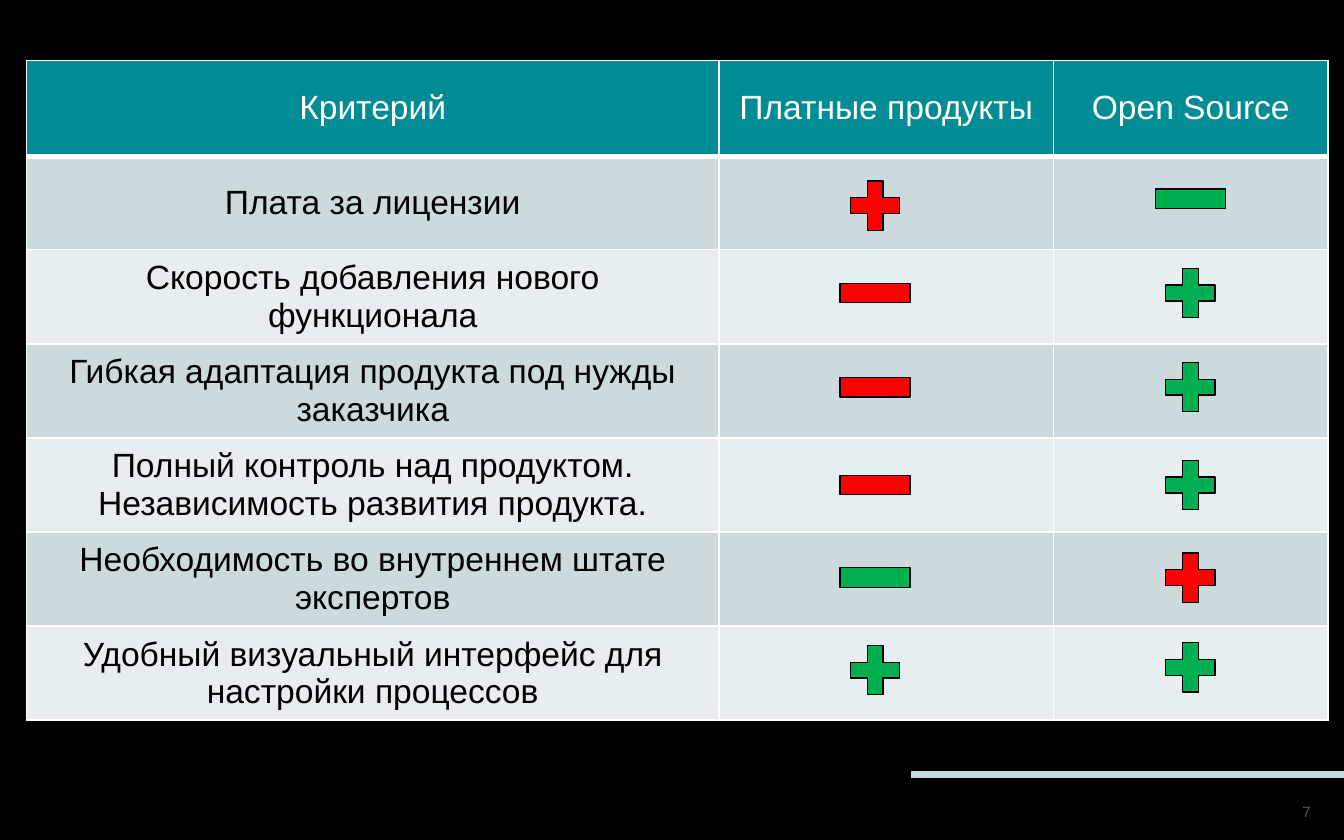
from lxml import etree
from pptx import Presentation
from pptx.dml.color import RGBColor
from pptx.enum.shapes import MSO_CONNECTOR, MSO_SHAPE
from pptx.enum.text import MSO_ANCHOR, PP_ALIGN
from pptx.oxml.ns import qn
from pptx.util import Cm, Pt

PLUS, MINUS = MSO_SHAPE.MATH_PLUS, MSO_SHAPE.MATH_MINUS
STRAIGHT = MSO_CONNECTOR.STRAIGHT
MIDDLE, BOTTOM = MSO_ANCHOR.MIDDLE, MSO_ANCHOR.BOTTOM
CENTER, RIGHT = PP_ALIGN.CENTER, PP_ALIGN.RIGHT

THEME = {
    "font": "Arial", "table_size": 18, "number_size": 8,
    "background": "000000", "header": "008C95", "bands": ("CCDADD", "E7EEEF"),
    "header_text": "FFFFFF", "text": "000000", "border": "FFFFFF",
    "good": "00B050", "bad": "FF0000", "outline": "000000",
    "rule": "C0DADE", "number": "595959",
}

HEADERS = ("Критерий", "Платные продукты", "Open Source")
# criterion, then (shape, verdict, centre height in cm) for each product type
CRITERIA = [
    ("Плата за лицензии", (PLUS, "bad", 3.89), (MINUS, "good", 3.76)),
    ("Скорость добавления нового функционала",
     (MINUS, "bad", 5.54), (PLUS, "good", 5.54)),
    ("Гибкая адаптация продукта под нужды заказчика",
     (MINUS, "bad", 7.32), (PLUS, "good", 7.32)),
    ("Полный контроль над продуктом. Независимость развития продукта.",
     (MINUS, "bad", 9.17), (PLUS, "good", 9.17)),
    ("Необходимость во внутреннем штате экспертов",
     (MINUS, "good", 10.92), (PLUS, "bad", 10.92)),
    ("Удобный визуальный интерфейс для настройки процессов",
     (PLUS, "good", 12.67), (PLUS, "good", 12.62)),
]
PAGE_NUMBER = "7"

SLIDE_SIZE = (25.4, 15.88)
TABLE_LEFT, TABLE_TOP = 0.5, 1.14
COL_WIDTHS = (13.09, 6.32, 5.19)
HEADER_HEIGHT, ROW_HEIGHT = 1.81, 1.77
MARK_CENTERS = (16.54, 22.5)
MARK_SIZES = {PLUS: (1.27, 1.27), MINUS: (1.8, 1.57)}


def color(name):
    return RGBColor.from_string(THEME[name])


def write(tf, text, size, color_name, align):
    tf.text = text
    p = tf.paragraphs[0]
    p.alignment = align
    font = p.runs[0].font
    font.name, font.size = THEME["font"], Pt(THEME[size])
    font.color.rgb = color(color_name)


def set_borders(cell, bottom_width):
    """Put the four border lines ahead of the fill, as the schema requires."""
    tc_pr = cell._tc.get_or_add_tcPr()
    for i, (side, width) in enumerate(zip("LRTB", (1, 1, 1, bottom_width))):
        ln = etree.Element(qn(f"a:ln{side}"), w=str(Pt(width)))
        fill = etree.SubElement(ln, qn("a:solidFill"))
        etree.SubElement(fill, qn("a:srgbClr"), val=THEME["border"])
        tc_pr.insert(i, ln)


def add_criteria_table(s):
    rows = [HEADERS] + [(criterion, "", "") for criterion, *_ in CRITERIA]
    heights = [HEADER_HEIGHT] + [ROW_HEIGHT] * len(CRITERIA)
    table = s.shapes.add_table(
        len(rows), len(HEADERS), Cm(TABLE_LEFT), Cm(TABLE_TOP),
        Cm(sum(COL_WIDTHS)), Cm(sum(heights))).table
    for column, width in zip(table.columns, COL_WIDTHS):
        column.width = Cm(width)
    for r, (texts, height) in enumerate(zip(rows, heights)):
        table.rows[r].height = Cm(height)
        fill = THEME["bands"][(r - 1) % 2] if r else THEME["header"]
        for c, text in enumerate(texts):
            cell = table.cell(r, c)
            cell.vertical_anchor = MIDDLE
            cell.fill.solid()
            cell.fill.fore_color.rgb = RGBColor.from_string(fill)
            set_borders(cell, 1 if r else 3)
            if text:
                write(cell.text_frame, text, "table_size",
                      "text" if r else "header_text", CENTER)


def add_mark(s, shape, verdict, x, y):
    width, height = MARK_SIZES[shape]
    mark = s.shapes.add_shape(shape, Cm(x - width / 2), Cm(y - height / 2),
                              Cm(width), Cm(height))
    mark.shadow.inherit = False
    mark.fill.solid()
    mark.fill.fore_color.rgb = color(verdict)
    mark.line.color.rgb = color("outline")
    mark.line.width = Pt(0.75)


def add_footer(s):
    rule = s.shapes.add_connector(STRAIGHT, Cm(17.22), Cm(14.64),
                                  Cm(SLIDE_SIZE[0]), Cm(14.64))
    rule.line.color.rgb = color("rule")
    rule.line.width = Pt(3.75)
    etree.SubElement(rule._element.spPr, qn("a:effectLst"))
    tf = s.shapes.add_textbox(Cm(23.55), Cm(14.81), Cm(1.22), Cm(0.71)).text_frame
    tf.word_wrap = True
    tf.vertical_anchor = BOTTOM
    tf.margin_left = tf.margin_right = tf.margin_top = tf.margin_bottom = 0
    write(tf, PAGE_NUMBER, "number_size", "number", RIGHT)


def main():
    prs = Presentation()
    prs.slide_width, prs.slide_height = map(Cm, SLIDE_SIZE)
    s = prs.slides.add_slide(prs.slide_layouts[6])
    s.background.fill.solid()
    s.background.fill.fore_color.rgb = color("background")
    add_footer(s)
    add_criteria_table(s)
    for _, *marks in CRITERIA:
        for x, (shape, verdict, y) in zip(MARK_CENTERS, marks):
            add_mark(s, shape, verdict, x, y)
    prs.save("out.pptx")


if __name__ == "__main__":
    main()
